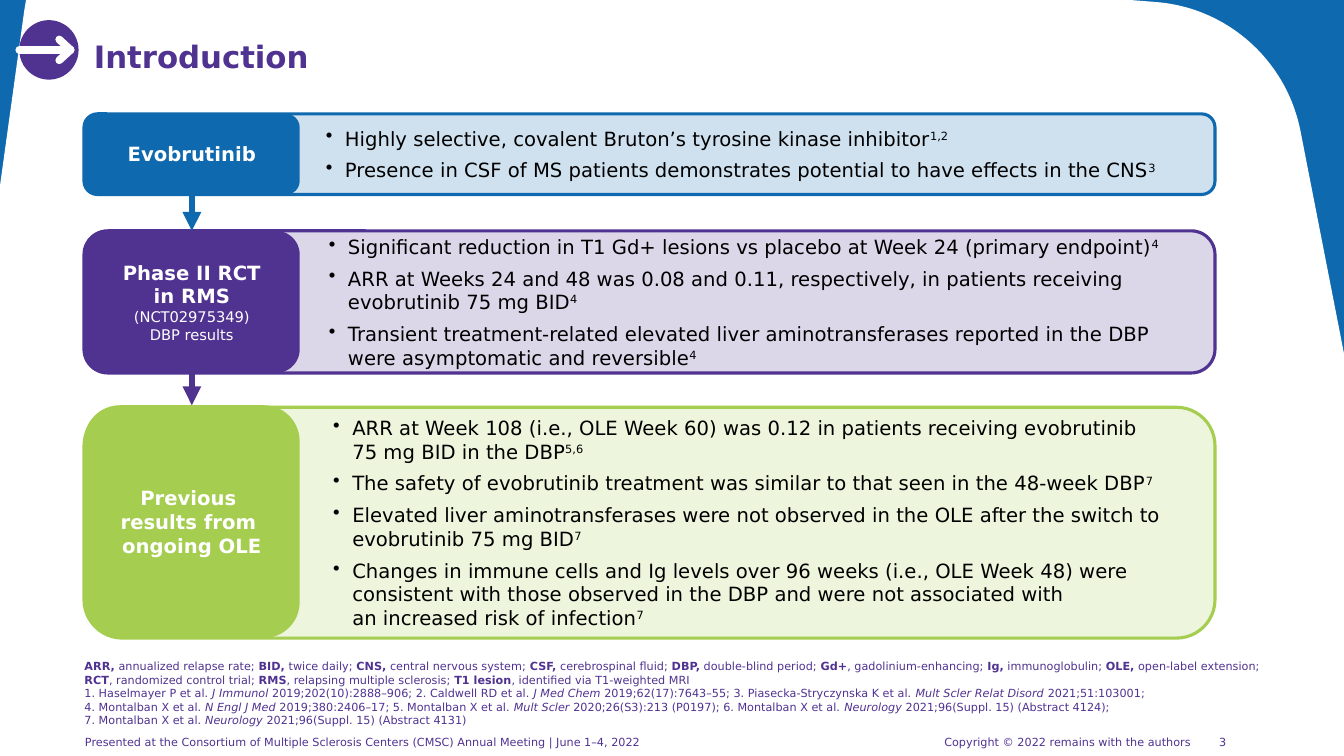
"""Build the introduction slide on a grid of 160 columns by 90 rows."""
from dataclasses import dataclass
from itertools import pairwise

from lxml.etree import SubElement
from pptx import Presentation
from pptx.dml.color import RGBColor
from pptx.enum.shapes import MSO_CONNECTOR as Connector, MSO_SHAPE as Preset
from pptx.enum.text import MSO_ANCHOR as Anchor, PP_ALIGN as Align
from pptx.oxml.ns import qn
from pptx.util import Emu, Pt

COLUMNS, ROWS, CELL = 160, 90, 76200
LEFT, PANEL_WIDTH, LABEL_WIDTH = 10, 134.64, 25.68
INSET_X, INSET_Y = 1.2, 0.6


@dataclass(frozen=True)
class Theme:
    """Colours, type face and type sizes of the slide."""
    blue: str = "0F69AF"
    purple: str = "503291"
    green: str = "A5CD50"
    white: str = "FFFFFF"
    black: str = "000000"
    face: str = "DejaVu Sans"
    title: float = 22
    body: float = 14
    detail: float = 10.5
    small: float = 8


THEME = Theme()


@dataclass(frozen=True)
class Panel:
    """One step of the story: a coloured label and its bullet points."""
    top: float
    height: float
    colour: str
    label: tuple[str, ...]
    bullets: tuple[str, ...]
    details: tuple[str, ...] = ()
    lift: float = 0
    right_inset: float = INSET_X
    label_inset: float = INSET_X


PANELS = (
    Panel(13.56, 9.6, THEME.blue, ("Evobrutinib",), (
        "Highly selective, covalent Bruton’s tyrosine kinase inhibitor*1,2*",
        "Presence in CSF of MS patients demonstrates potential to have effects in the CNS*3*")),
    Panel(27.48, 16.92, THEME.purple, ("Phase II RCT\nin RMS",), (
        "Significant reduction in T1 Gd+ lesions vs placebo at Week 24 (primary endpoint)*4*",
        "ARR at Weeks 24 and 48 was 0.08 and 0.11, respectively, in patients receiving "
        "evobrutinib 75 mg BID*4*",
        "Transient treatment-related elevated liver aminotransferases reported in the DBP "
        "were asymptomatic and reversible*4*"),
        details=("(NCT02975349)", "DBP results"), right_inset=0.6),
    Panel(48.48, 27.48, THEME.green, ("Previous ", "results from ", "ongoing OLE"), (
        "ARR at Week 108 (i.e., OLE Week 60) was 0.12 in patients receiving evobrutinib "
        "\n75 mg BID in the DBP*5,6*",
        "The safety of evobrutinib treatment was similar to that seen in the 48-week DBP*7*",
        "Elevated liver aminotransferases were not observed in the OLE after the switch to "
        "evobrutinib 75 mg BID*7*",
        "Changes in immune cells and Ig levels over 96 weeks (i.e., OLE Week 48) were "
        "consistent with those observed in the DBP and were not associated with "
        "\nan increased risk of infection*7*"),
        lift=0.24, label_inset=0.48),
)

ABBREVIATIONS = (
    "*ARR,* annualized relapse rate; *BID,* twice daily; *CNS,* central nervous system; "
    "*CSF,* cerebrospinal fluid; *DBP,* double-blind period; *Gd+*, gadolinium-enhancing; "
    "*Ig,* immunoglobulin; *OLE,* open-label extension; *RCT*, randomized control trial; "
    "*RMS*, relapsing multiple sclerosis; *T1 lesion*, identified via T1-weighted MRI")
REFERENCES = (
    "1. Haselmayer P et al. *J Immunol *2019;202(10):2888–906; "
    "2. Caldwell RD et al. *J Med Chem *2019;62(17):7643–55; "
    "3. Piasecka-Stryczynska K et al. *Mult Scler Relat Disord *2021;51:103001; "
    "\n4. Montalban X et al. *N Engl J Med *2019;380:2406–17; "
    "5. Montalban X et al. *Mult Scler *2020;26(S3):213 (P0197); "
    "6. Montalban X et al. *Neurology *2021;96(Suppl. 15) (Abstract 4124); "
    "\n7. Montalban X et al. *Neurology *2021;96(Suppl. 15) (Abstract 4131)")
FOOTER = ("Presented at the Consortium of Multiple Sclerosis Centers (CMSC) Annual Meeting "
          "| June 1–4, 2022\tCopyright © 2022 remains with the authors")


def cells(count: float) -> Emu:
    """Turn grid cells into a length."""
    return Emu(round(count * CELL))


def rgb(colour: str) -> RGBColor:
    """Turn a hex code into a colour."""
    return RGBColor.from_string(colour)


def write(box, text: str, *, size: float, colour: str, bold: bool = False, marked: str = "",
          align: Align = Align.LEFT, after: float = 0, spacing: float = 1.0,
          bullet: bool = False, tab: float = 0) -> None:
    """Add a paragraph; parts between asterisks get the marked style."""
    frame = box.text_frame
    para = frame.add_paragraph() if frame.text else frame.paragraphs[0]
    para.alignment, para.space_after, para.line_spacing = align, Pt(after), spacing
    layout = para._p.get_or_add_pPr()
    if bullet:
        layout.set("marL", str(cells(2.28)))
        layout.set("indent", str(cells(-2.28)))
        SubElement(layout, qn("a:buChar"), char="•")
    if tab:
        stops = SubElement(layout, qn("a:tabLst"))
        SubElement(stops, qn("a:tab"), pos=str(cells(tab)), algn="l")
    for order, part in enumerate(text.split("*")):
        style = marked if order % 2 else ""
        for row, line in enumerate(part.split("\n")):
            if row:
                para.add_line_break()
            if not line:
                continue
            span = para.add_run()
            span.text = line
            span.font.name, span.font.size = THEME.face, Pt(size)
            span.font.color.rgb = rgb(colour)
            span.font.bold = bold or style == "bold"
            span.font.italic = style == "italic"
            if style == "super":
                span._r.get_or_add_rPr().set("baseline", "30000")


def set_frame(box, insets: tuple[float, float, float, float], anchor: Anchor) -> None:
    """Set wrapping, anchor and the left, top, right and bottom insets."""
    frame = box.text_frame
    frame.word_wrap, frame.vertical_anchor = True, anchor
    (frame.margin_left, frame.margin_top,
     frame.margin_right, frame.margin_bottom) = map(cells, insets)


def add_text(page, left: float, top: float, width: float, height: float, *,
             anchor: Anchor = Anchor.TOP, insets=(INSET_X, INSET_Y, INSET_X, INSET_Y)):
    """Add an empty text box."""
    box = page.shapes.add_textbox(*map(cells, (left, top, width, height)))
    set_frame(box, insets, anchor)
    return box


def paint(shape, colour: str, *, opacity: int = 100, outline: float = 0) -> None:
    """Fill a shape and give it an outline of the same colour."""
    shape.shadow.inherit = False
    shape.fill.solid()
    shape.fill.fore_color.rgb = rgb(colour)
    if opacity < 100:
        tint = shape.element.spPr.find(qn("a:solidFill")).find(qn("a:srgbClr"))
        SubElement(tint, qn("a:alpha"), val=str(opacity * 1000))
    if outline:
        shape.line.width = Pt(outline)
        shape.line.color.rgb = rgb(colour)
    else:
        shape.line.fill.background()


def add_shape(page, preset: Preset, left: float, top: float, width: float, height: float,
              colour: str, **look):
    """Add a painted preset shape."""
    shape = page.shapes.add_shape(preset, *map(cells, (left, top, width, height)))
    paint(shape, colour, **look)
    return shape


def add_line(page, start: tuple[float, float], end: tuple[float, float], *, colour: str,
             weight: float, arrow: bool = False) -> None:
    """Draw an arrow, or a line with round ends."""
    line = page.shapes.add_connector(Connector.STRAIGHT, *map(cells, start + end))
    line.line.width, line.line.color.rgb = Pt(weight), rgb(colour)
    outline = line.element.spPr.find(qn("a:ln"))
    if arrow:
        SubElement(outline, qn("a:tailEnd"), type="triangle")
    else:
        outline.set("cap", "rnd")
    SubElement(line.element.spPr, qn("a:effectLst"))


def bezier(nodes: tuple[tuple[float, float], ...], steps: int = 40) -> list[tuple[float, float]]:
    """Return points along a cubic curve."""
    shares = [step / steps for step in range(steps + 1)]
    return [tuple((1 - t) ** 3 * a + 3 * t * (1 - t) ** 2 * b + 3 * t * t * (1 - t) * c + t ** 3 * d
                  for a, b, c, d in zip(*nodes)) for t in shares]


def add_backdrop(page) -> None:
    """Lay the white sheet over the blue background."""
    page.background.fill.solid()
    page.background.fill.fore_color.rgb = rgb(THEME.blue)
    shoulder = bezier(((137.5, 0.24), (146, 0.84), (153.1, 7.1), (154.8, 15.5)))
    outline = [(3.1, 0), (134.5, 0), *shoulder, (COLUMNS, 42.1), (COLUMNS, ROWS), (0, ROWS),
               (0, 22.1), (2.9, 1.2)]
    points = [(cells(x), cells(y)) for x, y in outline]
    builder = page.shapes.build_freeform(*points[0])
    builder.add_line_segments(points[1:])
    paint(builder.convert_to_shape(), THEME.white)


def add_icon(page) -> None:
    """Draw the round arrow icon beside the title."""
    add_shape(page, Preset.OVAL, 2.3, 2.4, 7.06, 7.08, THEME.purple)
    tip = (8.4, 5.94)
    for start in ((2.3, 5.94), (7.05, 4.7), (7.05, 7.18)):
        add_line(page, start, tip, colour=THEME.white, weight=5.5)


def add_panel(page, panel: Panel) -> None:
    """Draw a tinted panel with bullets and its label."""
    box = add_shape(page, Preset.ROUNDED_RECTANGLE, LEFT, panel.top, PANEL_WIDTH, panel.height,
                    panel.colour, opacity=20, outline=2.25)
    set_frame(box, (28.32, INSET_Y, panel.right_inset, INSET_Y), Anchor.MIDDLE)
    for text in panel.bullets:
        write(box, text, size=THEME.body, colour=THEME.black, marked="super", after=6, bullet=True)
    label = add_shape(page, Preset.ROUNDED_RECTANGLE, LEFT, panel.top - panel.lift, LABEL_WIDTH,
                      panel.height + panel.lift, panel.colour)
    set_frame(label, (panel.label_inset, INSET_Y) * 2, Anchor.MIDDLE)
    for text in panel.label:
        write(label, text, size=THEME.body, colour=THEME.white, bold=True, align=Align.CENTER)
    for text in panel.details:
        write(label, text, size=THEME.detail, colour=THEME.white, align=Align.CENTER)


def add_notes(page) -> None:
    """Add abbreviations, references, page number and footer."""
    small = {"size": THEME.small, "colour": THEME.purple}
    number = add_text(page, 142.2, 86.76, 6.72, 3.12, anchor=Anchor.MIDDLE)
    write(number, "3", align=Align.CENTER, **small)
    notes = add_text(page, 8.88, 77.88, 143.16, 9.24, anchor=Anchor.BOTTOM)
    write(notes, ABBREVIATIONS, marked="bold", **small)
    write(notes, REFERENCES, marked="italic", **small)
    footer = add_text(page, LEFT, 87.48, 147.96, 1.68, insets=(0.12, 0.12, 0, 0))
    write(footer, FOOTER, tab=102.3, **small)


def main() -> None:
    """Build and save the deck."""
    deck = Presentation()
    deck.slide_width, deck.slide_height = cells(COLUMNS), cells(ROWS)
    page = deck.slides.add_slide(deck.slide_layouts[6])
    add_backdrop(page)
    title = add_text(page, LEFT, 4.44, 139.08, 10.56)
    write(title, "Introduction", size=THEME.title, colour=THEME.purple, bold=True, spacing=0.9)
    add_icon(page)
    for panel in PANELS:
        add_panel(page, panel)
    middle = LEFT + LABEL_WIDTH / 2
    for upper, lower in pairwise(PANELS):
        add_line(page, (middle, upper.top + upper.height), (middle, lower.top - lower.lift),
                 colour=upper.colour, weight=4.5, arrow=True)
    add_notes(page)
    deck.save("out.pptx")


if __name__ == "__main__":
    main()
